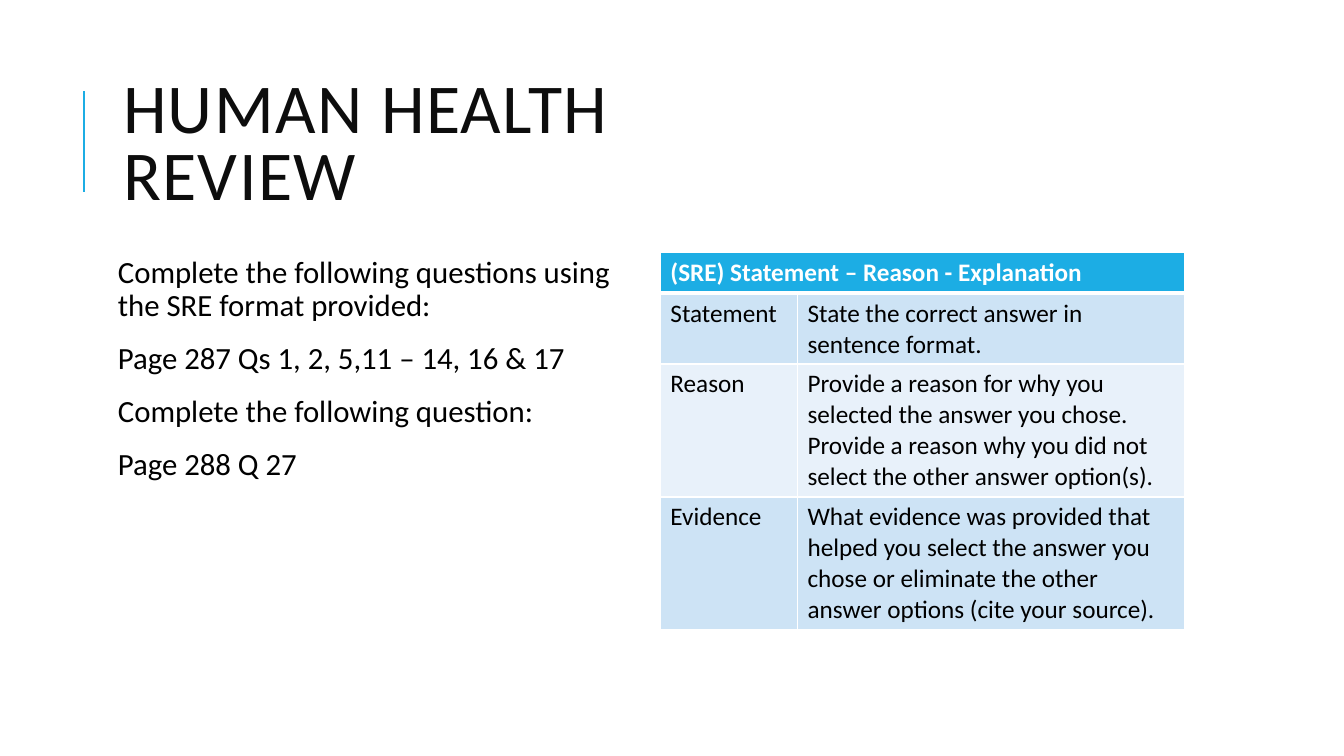
import pptx
import pptx.dml.color
import pptx.enum.shapes
import pptx.enum.text
import pptx.oxml
import pptx.util
from lxml import etree

Inches, Pt = pptx.util.Inches, pptx.util.Pt
RGBColor = pptx.dml.color.RGBColor
ALIGN, ANCHOR = pptx.enum.text.PP_ALIGN, pptx.enum.text.MSO_ANCHOR

# Content
TITLE = "HUMAN HEALTH\vREVIEW"
TASKS = [
    "Complete the following questions using the SRE format provided:",
    "Page 287 Qs 1, 2, 5,11 – 14, 16 & 17",
    "Complete the following question:",
    "Page 288 Q 27",
]
SRE_ROWS = [
    ("(SRE) Statement – Reason - Explanation", ""),
    ("Statement", "State the correct answer in sentence format."),
    ("Reason", "Provide a reason for why you selected the answer you chose. "
               "Provide a reason why you did not select the other answer option(s)."),
    ("Evidence", "What evidence was provided that helped you select the answer you "
                 "chose or eliminate the other answer options (cite your source)."),
]
COL_WIDTHS = [1.36, 3.84]
ROW_HEIGHTS = [0.41, 0.7, 1.32, 1.32]

FONT = "Calibri"
ACCENT = RGBColor(0x1C, 0xAD, 0xE4)
BAND_DARK = RGBColor(0xCD, 0xE3, 0xF5)
BAND_LIGHT = RGBColor(0xE8, 0xF1, 0xFA)
WHITE = RGBColor(0xFF, 0xFF, 0xFF)
BLACK = RGBColor(0, 0, 0)
TITLE_COLOR = RGBColor(0x0D, 0x0D, 0x0D)
A_NS = "http://schemas.openxmlformats.org/drawingml/2006/main"


def write(p, text, size, color=BLACK, bold=False, line=None, before=0, after=0, spacing=0):
    p.alignment = ALIGN.LEFT
    p.space_before, p.space_after = Pt(before), Pt(after)
    if line:
        p.line_spacing = line
    for i, part in enumerate(text.split("\v")):
        if i:
            p.add_line_break()
        r = p.add_run()
        r.text = part
        r.font.name, r.font.size, r.font.bold = FONT, Pt(size), bold
        r.font.color.rgb = color
        if spacing:
            r.font._element.set("spc", str(spacing * 100))


def add_border(cell, side, width):
    cell._tc.get_or_add_tcPr().append(pptx.oxml.parse_xml(
        f'<a:ln{side} xmlns:a="{A_NS}" w="{Pt(width)}"><a:solidFill>'
        f'<a:srgbClr val="{WHITE}"/></a:solidFill></a:ln{side}>'))


prs = pptx.Presentation()
prs.slide_width, prs.slide_height = Inches(13.33), Inches(7.5)
s = prs.slides.add_slide(prs.slide_layouts[5])

# Accent line beside the title
line = s.shapes.add_connector(pptx.enum.shapes.MSO_CONNECTOR.STRAIGHT,
                              Inches(0.83), Inches(1.9), Inches(0.83), Inches(0.9))
line.line.color.rgb, line.line.width = ACCENT, Pt(1.5)
etree.SubElement(line._element.spPr, f"{{{A_NS}}}effectLst")

# Title
title = s.shapes.title
title.left, title.top = Inches(1.12), Inches(0.64)
title.width, title.height = Inches(10.63), Inches(1.64)
tf = title.text_frame
tf.auto_size = pptx.enum.text.MSO_AUTO_SIZE.NONE
tf.vertical_anchor = ANCHOR.MIDDLE
write(tf.paragraphs[0], TITLE, 50, TITLE_COLOR, line=0.8, spacing=1)

# Task list
box = s.shapes.add_textbox(Inches(1.12), Inches(2.5), Inches(5.2), Inches(4.4))
tf = box.text_frame
tf.word_wrap = True
tf.margin_left = tf.margin_right = tf.margin_top = tf.margin_bottom = Inches(0.05)
for i, task in enumerate(TASKS):
    p = tf.add_paragraph() if i else tf.paragraphs[0]
    write(p, task, 22, line=0.9, before=12 if i else 0, after=2)

# SRE table
table = s.shapes.add_table(len(SRE_ROWS), len(COL_WIDTHS), Inches(6.55), Inches(2.5),
                           Inches(sum(COL_WIDTHS)), Inches(sum(ROW_HEIGHTS))).table
for col, width in zip(table.columns, COL_WIDTHS):
    col.width = Inches(width)
for row, height in zip(table.rows, ROW_HEIGHTS):
    row.height = Inches(height)
table.cell(0, 0).merge(table.cell(0, 1))
for i, texts in enumerate(SRE_ROWS):
    header = i == 0
    fill = ACCENT if header else BAND_DARK if i % 2 else BAND_LIGHT
    for j, text in enumerate(texts):
        cell = table.cell(i, j)
        for side in "LRTB":
            thick = (i, side) in [(0, "B"), (1, "T")]
            add_border(cell, side, 3 if thick else 1)
        cell.fill.solid()
        cell.fill.fore_color.rgb = fill
        if text:
            write(cell.text_frame.paragraphs[0], text, 18,
                  WHITE if header else BLACK, bold=header)

prs.save("out.pptx")
